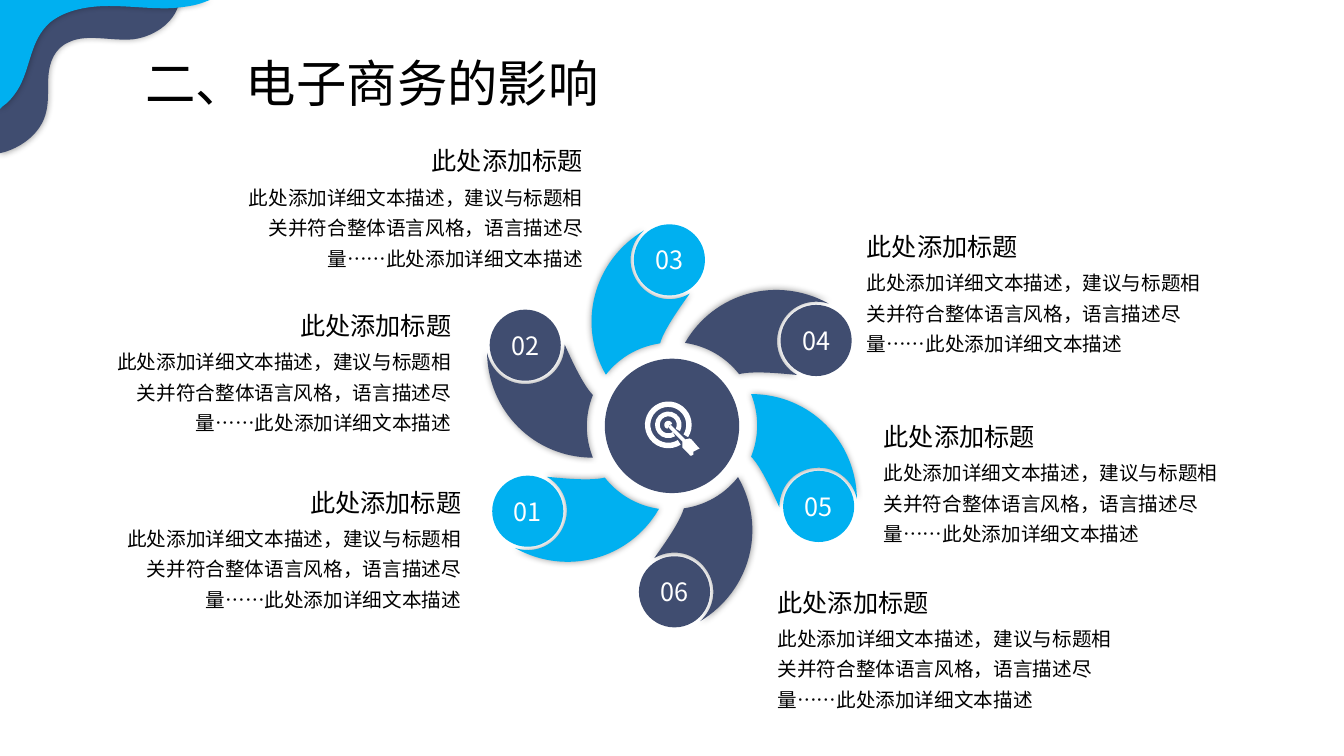
"""Builds a slide with a six-petal wheel and a caption beside each petal."""
from dataclasses import dataclass
from math import cos, radians, sin, tan
from typing import Any, Callable, NamedTuple

from lxml.etree import SubElement
from pptx import Presentation
from pptx.dml.color import RGBColor
from pptx.enum.shapes import MSO_SHAPE
from pptx.enum.text import MSO_ANCHOR, MSO_AUTO_SIZE, PP_ALIGN
from pptx.oxml.ns import qn
from pptx.shapes.autoshape import Shape
from pptx.shapes.shapetree import SlideShapes
from pptx.text.text import TextFrame
from pptx.util import Pt


class Point(NamedTuple):
    x: float
    y: float


class Box(NamedTuple):
    left: float
    top: float
    width: float
    height: float


class Contour(NamedTuple):
    start: tuple[float, float]
    segments: list[list[tuple[float, float]]]


@dataclass(frozen=True)
class Theme:
    font: str = "Noto Sans CJK SC"
    navy: str = "404D70"
    blue: str = "00B0F0"
    white: str = "FFFFFF"
    black: str = "000000"
    title_size: int = 36
    heading_size: int = 18
    body_size: int = 14


@dataclass(frozen=True)
class Petal:
    number: str
    angle: int
    color: str
    hub: Point
    caption: Point
    align: PP_ALIGN


THEME = Theme()
TITLE = "二、电子商务的影响"
HEADING = "此处添加标题"
BODY = "此处添加详细文本描述，建议与标题相关并符合整体语言风格，语言描述尽量……此处添加详细文本描述"
HUB, UPPER_HUB, LOWER_HUB = Point(480, 304.2), Point(480.7, 305.2), Point(479.3, 303.2)
HUB_DIAMETER, BADGE_DIAMETER = 96, 50.8
BADGE = Point(104.8, 57.6)
ICON = Point(477.4, 303.5)
ARC_COUNT = 4
CAPTION_WIDTH, HEADING_WIDTH, BODY_OFFSET = 257, 161, 23.4

PETALS = [
    Petal("03", -120, THEME.blue, UPPER_HUB, Point(166.5, 100.6), PP_ALIGN.RIGHT),
    Petal("04", -60, THEME.navy, UPPER_HUB, Point(612, 161.8), PP_ALIGN.LEFT),
    Petal("05", 0, THEME.blue, HUB, Point(624.2, 297.4), PP_ALIGN.LEFT),
    Petal("06", 60, THEME.navy, LOWER_HUB, Point(548.3, 415.7), PP_ALIGN.LEFT),
    Petal("01", 120, THEME.blue, LOWER_HUB, Point(79.6, 344.2), PP_ALIGN.RIGHT),
    Petal("02", 180, THEME.navy, HUB, Point(72.5, 218.2), PP_ALIGN.RIGHT),
]
PETAL_CONTOUR = Contour((56.5, -22.7), [
    [(98.3, -22.7), (131.4, 10.4), (132.1, 52.2)],
    [(129.2, 39.2), (118.4, 29.9), (104.8, 29.9)],
    [(88.9, 29.9), (76.7, 42.1), (76.7, 58)],
    [(76.7, 58.7), (65.2, 30.6), (56.5, 22)],
    [(62.3, 7.6), (62.3, -8.3), (56.5, -22.7)],
])
WAVES = {
    THEME.navy: Contour((38.2, 0), [
        [(128.2, 0)],
        [(126.7, 13.7), (112.3, 25.9), (95, 28.1)],
        [(79.2, 29.5), (61.9, 23.8), (49, 30.2)],
        [(38.9, 34.6), (35.3, 44.6), (34.6, 54)],
        [(33.8, 63.4), (35.3, 72.7), (32.4, 82.1)],
        [(28.8, 94.3), (17.3, 104.4), (2.9, 108.7)],
        [(0, 109.4)], [(0, 60.5)], [(3.6, 58.3)],
        [(10.1, 54), (15.8, 49), (19.4, 43.2)],
        [(26.6, 31), (28.1, 16.6), (34.6, 5)],
    ]),
    THEME.blue: Contour((0, 0), [
        [(149.8, 0)], [(146.2, 1.4)],
        [(139, 4.3), (131, 5), (123.8, 5.8)],
        [(108.7, 6.5), (93.6, 4.3), (77.8, 4.3)],
        [(62.6, 4.3), (46.8, 7.2), (36, 15.8)],
        [(20.9, 28.8), (22.3, 49), (12.2, 64.8)],
        [(9.4, 69.1), (5.8, 73.4), (1.4, 76.3)],
        [(0, 77.8)],
    ]),
}
ARROW = Contour((1.4, -0.4), [[point] for point in [
    (2.2, 0.4), (12.2, 10.4), (15.1, 9.7), (16.6, 10.4), (21.6, 16.2), (22.3, 16.9),
    (20.9, 17.6), (19.4, 18.4), (18, 19.1), (18, 21.2), (16.6, 22), (15.8, 22),
    (10.1, 16.2), (10.1, 11.9), (0.7, 2.5), (0.4, 1.4), (0.7, 0.4)]])
RINGS = [(16.7, 12.8, 58, 392), (9.5, 6.1, 59, 388), (2.9, 0, 105, 340)]


def apply_format(target: Any, values: dict[str, Any]) -> None:
    for name, value in values.items():
        setattr(target, name, value)


def turn(point: tuple[float, float], petal: Petal) -> Point:
    x, y = point
    c, s = cos(radians(petal.angle)), sin(radians(petal.angle))
    return Point(petal.hub.x + x * c - y * s, petal.hub.y + x * s + y * c)


def place(contour: Contour, move: Callable[[tuple[float, float]], Point]) -> Contour:
    return Contour(move(contour.start), [[move(p) for p in segment] for segment in contour.segments])


def arc(radius: float, start: float, end: float) -> Contour:
    step = radians(end - start) / ARC_COUNT
    reach = 4 / 3 * tan(step / 4)
    angles = [radians(start) + step * index for index in range(ARC_COUNT + 1)]
    segments = [[(radius * (cos(a) - reach * sin(a)), radius * (sin(a) + reach * cos(a))),
                 (radius * (cos(b) + reach * sin(b)), radius * (sin(b) - reach * cos(b))),
                 (radius * cos(b), radius * sin(b))] for a, b in zip(angles, angles[1:])]
    return Contour((radius * cos(angles[0]), radius * sin(angles[0])), segments)


def ring(outer: float, inner: float, start: float, end: float) -> Contour:
    edge = arc(outer, start, end)
    if not inner:
        return edge
    hole = arc(inner, end, start)
    return Contour(edge.start, [*edge.segments, [hole.start], *hole.segments])


def paint(shape: Shape, color: str, shadow: bool = False) -> None:
    shape.fill.solid()
    shape.fill.fore_color.rgb = RGBColor.from_string(color)
    shape.line.fill.background()
    shape.shadow.inherit = False
    if shadow:
        effects = shape._element.spPr.find(qn("a:effectLst"))
        outer = SubElement(effects, qn("a:outerShdw"), blurRad=str(Pt(5)), dist="0", dir="0",
                           algn="ctr", rotWithShape="0")
        shade = SubElement(outer, qn("a:srgbClr"), val=THEME.black)
        SubElement(shade, qn("a:alpha"), val="40000")


def draw_outline(shapes: SlideShapes, contours: list[Contour], color: str, shadow: bool) -> None:
    builder = shapes.build_freeform(*map(Pt, contours[0].start))
    for index, contour in enumerate(contours):
        if index:
            builder.move_to(*map(Pt, contour.start))
        builder.add_line_segments([(Pt(x), Pt(y)) for segment in contour.segments for x, y in segment])
    shape = builder.convert_to_shape()
    lines = iter(list(shape._element.iter(qn("a:lnTo"))))
    for segment in (segment for contour in contours for segment in contour.segments):
        first, *others = [next(lines) for _ in segment]
        if others:
            first.tag = qn("a:cubicBezTo")
        for line in others:
            first.append(line[0])
            line.getparent().remove(line)
    paint(shape, color, shadow)


def draw_disc(shapes: SlideShapes, center: Point, diameter: float, color: str) -> Shape:
    corner = (center.x - diameter / 2, center.y - diameter / 2)
    shape = shapes.add_shape(MSO_SHAPE.OVAL, *map(Pt, (*corner, diameter, diameter)))
    paint(shape, color)
    return shape


def write(frame: TextFrame, text: str, size: int, color: str, values: dict[str, Any]) -> None:
    paragraph = frame.paragraphs[0]
    apply_format(paragraph, values)
    run = paragraph.add_run()
    run.text = text
    apply_format(run.font, {"name": THEME.font, "size": Pt(size)})
    run.font.color.rgb = RGBColor.from_string(color)
    SubElement(run._r.get_or_add_rPr(), qn("a:ea"), typeface=THEME.font)


def draw_text(shapes: SlideShapes, box: Box, text: str, size: int, values: dict[str, Any]) -> None:
    frame = shapes.add_textbox(*map(Pt, box)).text_frame
    apply_format(frame, {"word_wrap": True, "auto_size": MSO_AUTO_SIZE.SHAPE_TO_FIT_TEXT})
    write(frame, text, size, THEME.black, values)


def draw_petal(shapes: SlideShapes, petal: Petal) -> None:
    draw_outline(shapes, [place(PETAL_CONTOUR, lambda p: turn(p, petal))], petal.color, True)
    frame = draw_disc(shapes, turn(BADGE, petal), BADGE_DIAMETER, petal.color).text_frame
    margins = {f"margin_{side}": 0 for side in ("left", "right", "top", "bottom")}
    apply_format(frame, {**margins, "word_wrap": False, "vertical_anchor": MSO_ANCHOR.MIDDLE})
    write(frame, petal.number, THEME.heading_size, THEME.white, {"alignment": PP_ALIGN.CENTER})


def draw_caption(shapes: SlideShapes, petal: Petal) -> None:
    left, top = petal.caption
    indent = CAPTION_WIDTH - HEADING_WIDTH if petal.align == PP_ALIGN.RIGHT else 0
    values = {"alignment": petal.align}
    draw_text(shapes, Box(left, top + BODY_OFFSET, CAPTION_WIDTH, 72), BODY, THEME.body_size,
              {**values, "line_spacing": 1.3})
    draw_text(shapes, Box(left + indent, top, HEADING_WIDTH, 28.8), HEADING, THEME.heading_size, values)


def main() -> None:
    presentation = Presentation()
    apply_format(presentation, {"slide_width": Pt(960), "slide_height": Pt(540)})
    shapes = presentation.slides.add_slide(presentation.slide_layouts[6]).shapes
    for color, wave in WAVES.items():
        draw_outline(shapes, [wave], color, True)
    draw_text(shapes, Box(96.5, 27.4, 362, 54.7), TITLE, THEME.title_size, {"line_spacing": 1.14})
    draw_disc(shapes, HUB, HUB_DIAMETER, THEME.navy)
    for petal in PETALS:
        draw_petal(shapes, petal)
    target = [place(contour, lambda p: Point(ICON.x + p[0], ICON.y + p[1]))
              for contour in [ARROW, *(ring(*band) for band in RINGS)]]
    draw_outline(shapes, target, THEME.white, False)
    for petal in PETALS:
        draw_caption(shapes, petal)
    presentation.save("out.pptx")


if __name__ == "__main__":
    main()
